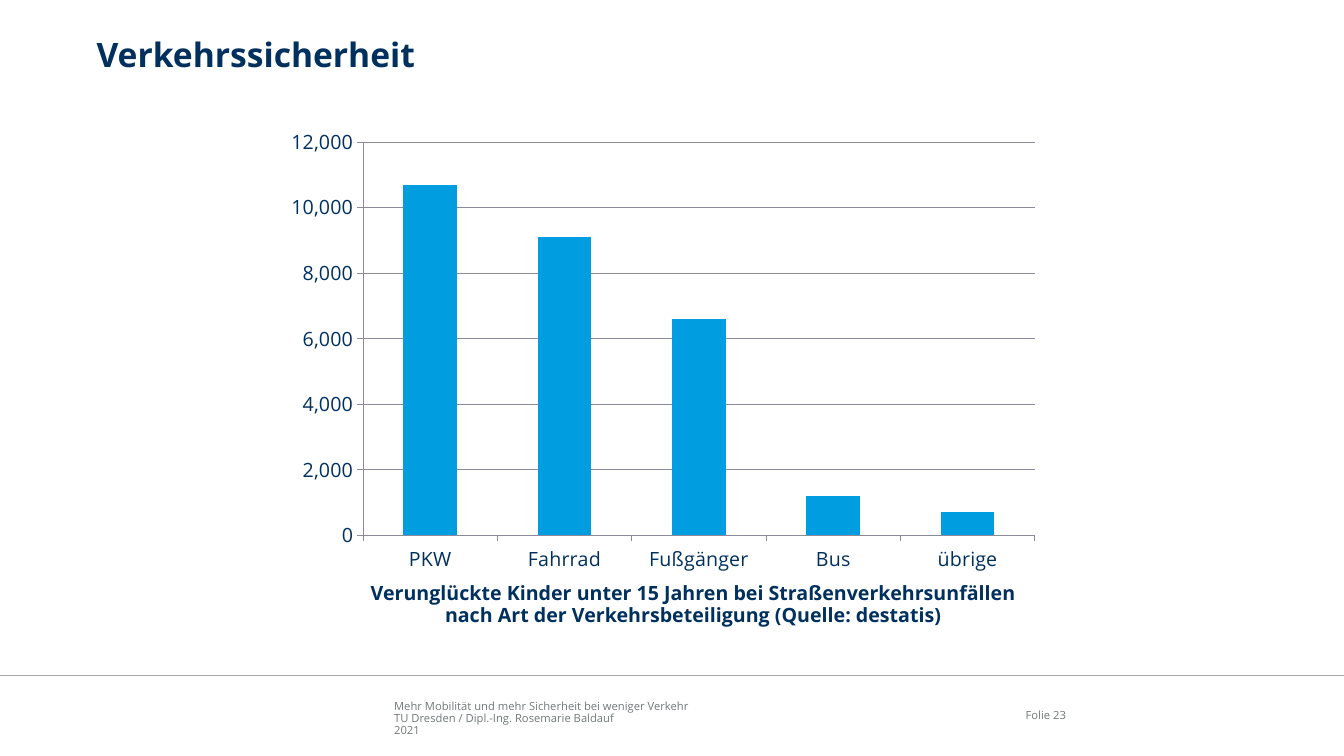
from lxml.etree import SubElement
from pptx import Presentation
from pptx.chart.data import CategoryChartData
from pptx.dml.color import RGBColor
from pptx.enum.chart import XL_CHART_TYPE, XL_TICK_MARK
from pptx.enum.shapes import MSO_CONNECTOR
from pptx.enum.text import MSO_ANCHOR, PP_ALIGN
from pptx.oxml.ns import qn
from pptx.util import Pt

FONT = "Open Sans"
NAVY, BLUE, GREY, RULE, GRID = "00305E", "009EE0", "727879", "A6A6A6", "8A8A9A"
WIDTH, HEIGHT = 960, 540


def rgb(color):
    return RGBColor.from_string(color)


def set_font(font, size, color, bold=False):
    font.name, font.size, font.bold = FONT, Pt(size), bold
    font.color.rgb = rgb(color)


def add_text(s, box, lines, size, color, bold=False,
             align=PP_ALIGN.LEFT, anchor=MSO_ANCHOR.TOP):
    tf = s.shapes.add_textbox(*map(Pt, box)).text_frame
    tf.margin_left = tf.margin_right = tf.margin_top = tf.margin_bottom = 0
    tf.word_wrap = True
    tf.vertical_anchor = anchor
    tf.text = "\n".join(lines)
    for p in tf.paragraphs:
        p.alignment = align
        p.line_spacing = 0.9
        set_font(p.font, size, color, bold)


def set_plot_layout(chart, x, y, w, h):
    """Fix the inner plot area, in fractions of the chart."""
    plot_area = chart._chartSpace.chart.plotArea
    for old in plot_area.findall(qn("c:layout")):
        plot_area.remove(old)
    layout = SubElement(plot_area, qn("c:layout"))
    plot_area.insert(0, layout)
    manual = SubElement(layout, qn("c:manualLayout"))
    for tag, val in (("layoutTarget", "inner"), ("xMode", "edge"), ("yMode", "edge"),
                     ("x", x), ("y", y), ("w", w), ("h", h)):
        SubElement(manual, qn(f"c:{tag}")).set("val", str(val))


def add_accident_chart(s, box):
    data = CategoryChartData()
    data.categories = ["PKW", "Fahrrad", "Fußgänger", "Bus", "übrige"]
    data.add_series("Verunglückte Kinder", [10700, 9100, 6600, 1200, 700])
    chart = s.shapes.add_chart(
        XL_CHART_TYPE.COLUMN_CLUSTERED, *map(Pt, box), data).chart
    chart.has_legend = chart.has_title = False
    set_font(chart.font, 14, NAVY)
    set_plot_layout(chart, 0.11, 0.05, 0.87, 0.85)

    plot = chart.plots[0]
    plot.gap_width = 150
    plot.vary_by_categories = False
    fill = plot.series[0].format.fill
    fill.solid()
    fill.fore_color.rgb = rgb(BLUE)

    value_axis = chart.value_axis
    value_axis.minimum_scale, value_axis.maximum_scale = 0, 12000
    value_axis.major_unit = 2000
    value_axis.has_major_gridlines = True
    value_axis.tick_labels.number_format = "#,##0"
    value_axis.tick_labels.number_format_is_linked = False
    for axis in (chart.category_axis, value_axis):
        axis.major_tick_mark = XL_TICK_MARK.OUTSIDE
        set_font(axis.tick_labels.font, 14, NAVY)
    for part in (chart.category_axis, value_axis, value_axis.major_gridlines):
        part.format.line.color.rgb = rgb(GRID)
        part.format.line.width = Pt(0.75)


def add_content(s, left, top, width):
    """Chart with its caption centred below."""
    add_accident_chart(s, (left, top, width, 330.5))
    add_text(s, (left + 58.3, top + 334, 476.6, 26.6),
             ["Verunglückte Kinder unter 15 Jahren bei Straßenverkehrsunfällen "
              "nach Art der Verkehrsbeteiligung (Quelle: destatis)"],
             14, NAVY, True, PP_ALIGN.CENTER, MSO_ANCHOR.MIDDLE)


def add_footer(s, top):
    line = s.shapes.add_connector(
        MSO_CONNECTOR.STRAIGHT, 0, Pt(top), Pt(WIDTH), Pt(top))
    line.line.color.rgb = rgb(RULE)
    line.line.width = Pt(1)
    SubElement(line._element.spPr, qn("a:effectLst"))
    add_text(s, (281.5, top + 15, 408, 29),
             ["Mehr Mobilität und mehr Sicherheit bei weniger Verkehr",
              "TU Dresden / Dipl.-Ing. Rosemarie Baldauf", "2021"],
             8, GREY, anchor=MSO_ANCHOR.BOTTOM)
    add_text(s, (706, top + 14.5, 55.5, 29), ["Folie 23"], 8, GREY,
             align=PP_ALIGN.RIGHT, anchor=MSO_ANCHOR.MIDDLE)


def main():
    prs = Presentation()
    prs.slide_width, prs.slide_height = Pt(WIDTH), Pt(HEIGHT)
    s = prs.slides.add_slide(prs.slide_layouts[6])
    add_footer(s, 482.4)
    add_text(s, (69, 27.5, 833, 54), ["Verkehrssicherheit"], 24, NAVY, True)
    add_content(s, 198.7, 85, 551.5)
    prs.save("out.pptx")


if __name__ == "__main__":
    main()
